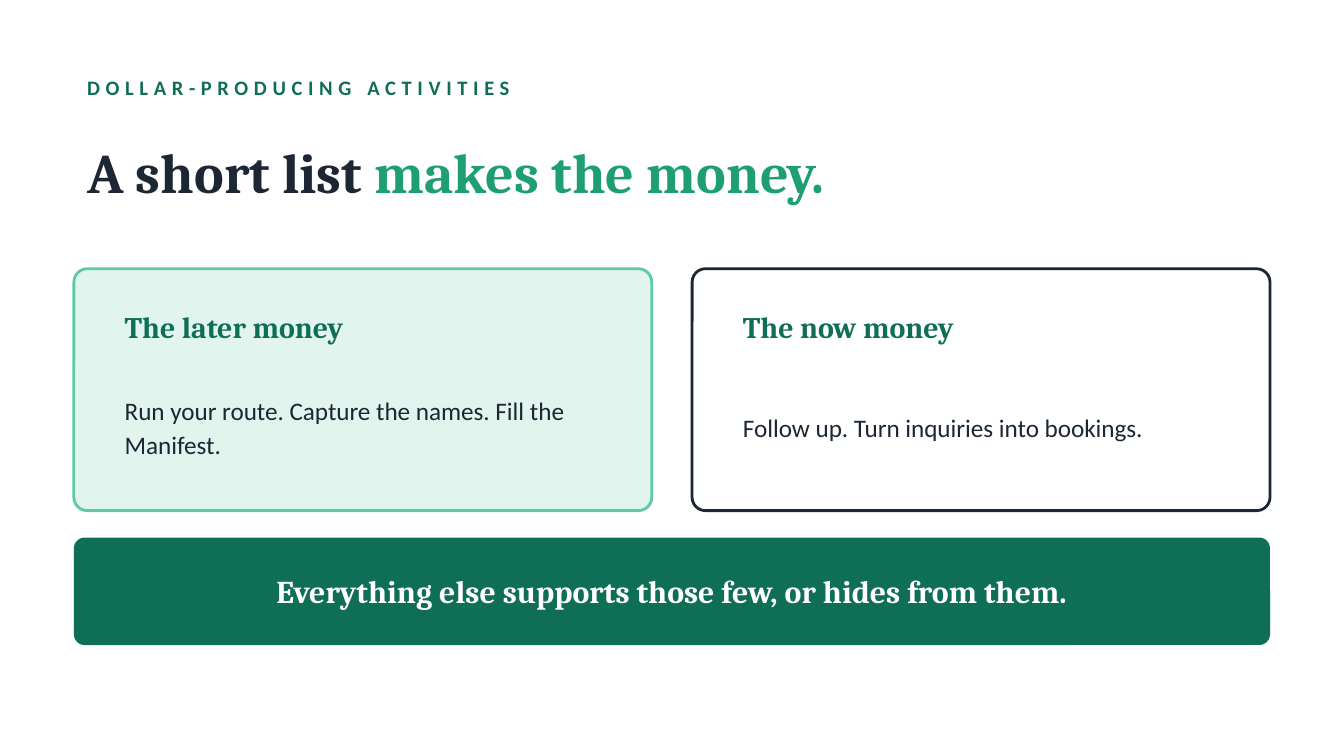
from pptx import Presentation, util as u
from pptx.dml.color import RGBColor
from pptx.enum import shapes, text

# Content
EYEBROW = "DOLLAR-PRODUCING ACTIVITIES"
HEADLINE = [("A short list ", "ink"), ("makes the money.", "accent")]
CARDS = [
    ("The later money", "Run your route. Capture the names. Fill the Manifest.", "mint", "mint_line"),
    ("The now money", "Follow up. Turn inquiries into bookings.", "white", "ink"),
]
TAKEAWAY = "Everything else supports those few, or hides from them."

COLORS = {
    "ink": "1C2733", "green": "0F6E56", "accent": "1D9E75",
    "mint": "E1F5EE", "mint_line": "5DCAA5", "white": "FFFFFF",
}
HEADING, BODY = "Cambria", "Calibri"

# Layout, in px at 200 to the inch
PX = u.Inches(1) // 200
SLIDE_WIDTH, SLIDE_HEIGHT = 2000, 1125
MARGIN, GAP = 110, 60
CONTENT_WIDTH = SLIDE_WIDTH - 2 * MARGIN
CARD_TOP, CARD_HEIGHT, CARD_RADIUS = 400, 360, 20
CARD_WIDTH = (CONTENT_WIDTH - GAP * (len(CARDS) - 1)) // len(CARDS)
CARD_PADDING, CARD_TEXT_WIDTH = 56, 760
BANNER_TOP, BANNER_HEIGHT, BANNER_RADIUS, BANNER_PADDING = 800, 160, 16, 50


def color(name):
    return RGBColor.from_string(COLORS[name])


def add_text(slide, box, runs, size, font, bold=True, align=None, spacing=None):
    """Add one paragraph of (text, color) runs, centred vertically in its box."""
    frame = slide.shapes.add_textbox(*(v * PX for v in box)).text_frame
    frame.word_wrap = True
    frame.vertical_anchor = text.MSO_ANCHOR.MIDDLE
    paragraph = frame.paragraphs[0]
    paragraph.alignment = align
    paragraph.line_spacing = spacing
    paragraph.font.size = u.Pt(size)
    paragraph.font.name = font
    paragraph.font.bold = bold
    for words, color_name in runs:
        run = paragraph.add_run()
        run.text = words
        run.font.color.rgb = color(color_name)
    return paragraph


def add_panel(slide, box, radius, fill, line=None):
    shape = slide.shapes.add_shape(
        shapes.MSO_SHAPE.ROUNDED_RECTANGLE, *(v * PX for v in box))
    shape.shadow.inherit = False
    shape.adjustments[0] = radius / min(box[2:])
    shape.fill.solid()
    shape.fill.fore_color.rgb = color(fill)
    if line:
        shape.line.color.rgb = color(line)
        shape.line.width = u.Pt(1.5)
    else:
        shape.line.fill.background()


presentation = Presentation()
presentation.slide_width = SLIDE_WIDTH * PX
presentation.slide_height = SLIDE_HEIGHT * PX
slide = presentation.slides.add_slide(presentation.slide_layouts[6])
slide.background.fill.solid()
slide.background.fill.fore_color.rgb = color("white")

# Eyebrow, letterspaced by 3 pt, and headline
eyebrow = add_text(slide, (MARGIN, 100, CONTENT_WIDTH, 60), [(EYEBROW, "green")], 11, BODY)
eyebrow.runs[0].font._element.set("spc", "300")
add_text(slide, (MARGIN, 170, CONTENT_WIDTH, 170), HEADLINE, 30, HEADING)

# Cards
for index, (title, body, fill, line) in enumerate(CARDS):
    left = MARGIN + index * (CARD_WIDTH + GAP)
    text_left = left + CARD_PADDING
    add_panel(slide, (left, CARD_TOP, CARD_WIDTH, CARD_HEIGHT), CARD_RADIUS, fill, line)
    add_text(slide, (text_left, CARD_TOP + 36, CARD_TEXT_WIDTH, 100),
             [(title, "green")], 16, HEADING)
    add_text(slide, (text_left, CARD_TOP + 144, CARD_TEXT_WIDTH, 180),
             [(body, "ink")], 13.5, BODY, bold=False, spacing=1.1)

# Takeaway banner
add_panel(slide, (MARGIN, BANNER_TOP, CONTENT_WIDTH, BANNER_HEIGHT), BANNER_RADIUS, "green")
add_text(slide, (MARGIN + BANNER_PADDING, BANNER_TOP,
                 CONTENT_WIDTH - 2 * BANNER_PADDING, BANNER_HEIGHT),
         [(TAKEAWAY, "white")], 17, HEADING, align=text.PP_ALIGN.CENTER)

presentation.save("out.pptx")
